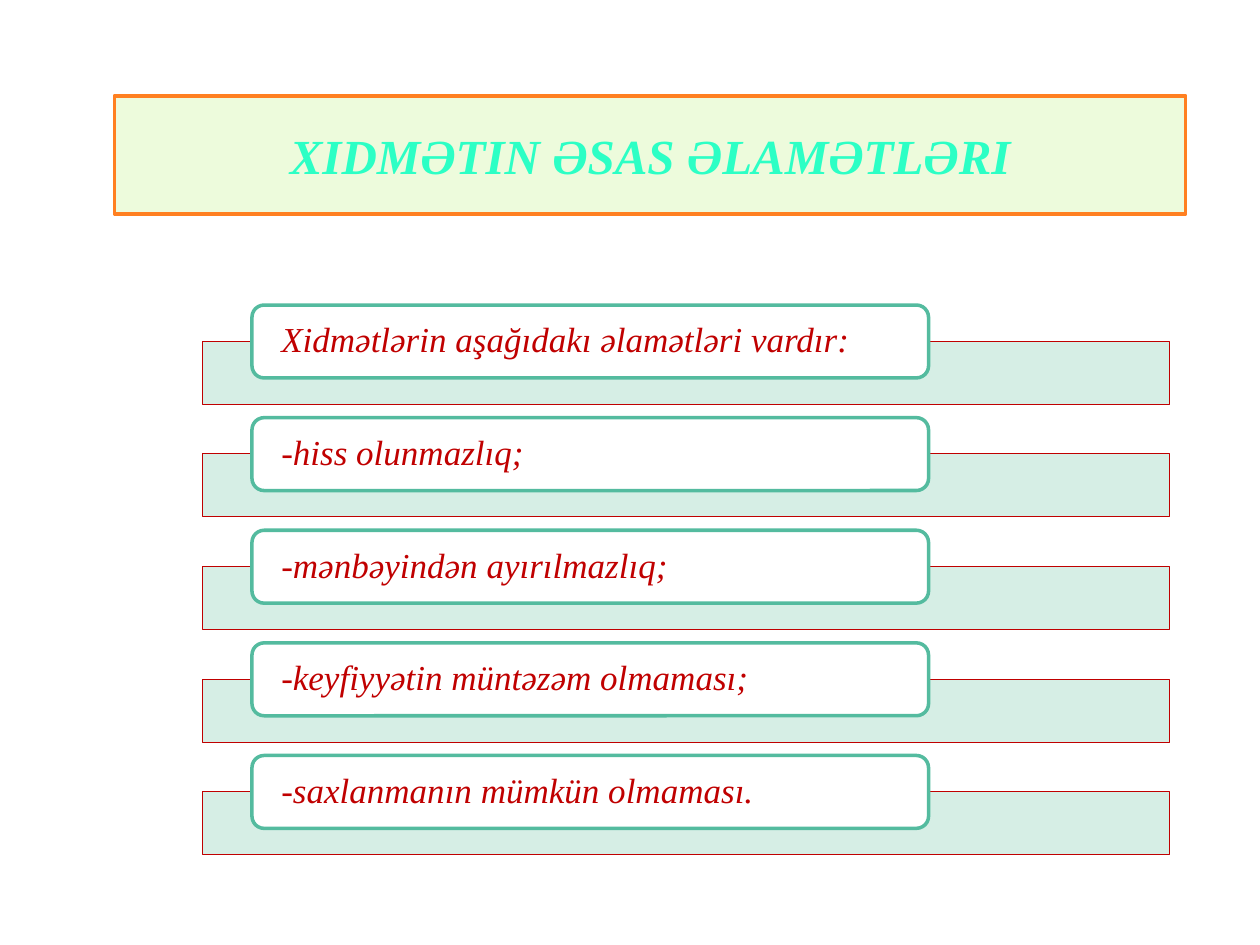
from lxml.etree import SubElement
from pptx import Presentation
from pptx.dml.color import RGBColor
from pptx.enum.shapes import MSO_SHAPE as Preset
from pptx.enum.text import MSO_ANCHOR as Anchor, PP_ALIGN as Align
from pptx.oxml.ns import qn
from pptx.util import Cm, Pt

FEATURES = [
    "Xidmətlərin aşağıdakı əlamətləri vardır:",
    "-hiss olunmazlıq;",
    "-mənbəyindən ayırılmazlıq;",
    "-keyfiyyətin müntəzəm olmaması;",
    "-saxlanmanın mümkün olmaması.",
]
ROW_PITCH = 2.27


def paint(fill, color, alpha=None):
    """Make a fill solid, with an optional opacity in percent."""
    fill.solid()
    fill.fore_color.rgb = RGBColor.from_string(color)
    if alpha is not None:
        tint = fill._xPr.find(qn("a:solidFill"))[0]
        SubElement(tint, qn("a:alpha"), val=str(alpha * 1000))


def style_box(box, fill, line, width, alpha=None):
    """Give a box its fill and outline."""
    paint(box.fill, fill, alpha)
    paint(box.line.fill, line)
    box.line.width = Pt(width)


def write(box, text, size, color, bold=False, align=Align.LEFT, inset=0.25, spacing=1.0):
    """Write one italic paragraph, vertically centred in a box."""
    frame = box.text_frame
    frame.word_wrap = True
    frame.vertical_anchor = Anchor.MIDDLE
    frame.margin_left = frame.margin_right = Cm(inset)
    frame.margin_top = frame.margin_bottom = 0
    para = frame.paragraphs[0]
    para.alignment = align
    para.line_spacing = spacing
    span = para.add_run()
    span.text = text
    span.font.name = "Times New Roman"
    span.font.size = Pt(size)
    span.font.bold = bold
    span.font.italic = True
    paint(span.font.fill, color)


def add_box(page, preset, left, top, width, height):
    """Add a shadowless preset shape measured in centimetres."""
    box = page.shapes.add_shape(preset, Cm(left), Cm(top), Cm(width), Cm(height))
    box.shadow.inherit = False
    return box


def add_title(page, text):
    """Place and format the title placeholder."""
    title = page.shapes.title
    title.left, title.top = Cm(2.31), Cm(1.93)
    title.width, title.height = Cm(21.59), Cm(2.39)
    style_box(title, "EDFBDC", "FF8021", 2)
    write(title, text, 28, "2CFFC5", bold=True, align=Align.CENTER)


def add_feature(page, text, offset):
    """Add a pale band with a rounded label over its upper edge."""
    band = add_box(page, Preset.RECTANGLE, 4.09, 6.88 + offset, 19.48, 1.27)
    style_box(band, "D2EDE3", "C00000", 0.5, alpha=90)
    label = add_box(page, Preset.ROUNDED_RECTANGLE, 5.08, 6.15 + offset, 13.64, 1.47)
    style_box(label, "FFFFFF", "54BB9F", 2)
    write(label, text, 20, "C00000", inset=0.52, spacing=0.9)


def main():
    """Build the slide and save it."""
    deck = Presentation()
    deck.slide_width, deck.slide_height = Cm(25.4), Cm(19.05)
    page = deck.slides.add_slide(deck.slide_layouts[5])
    add_title(page, "XIDMƏTIN ƏSAS ƏLAMƏTLƏRI")
    for row, feature in enumerate(FEATURES):
        add_feature(page, feature, row * ROW_PITCH)
    deck.save("out.pptx")


if __name__ == "__main__":
    main()
